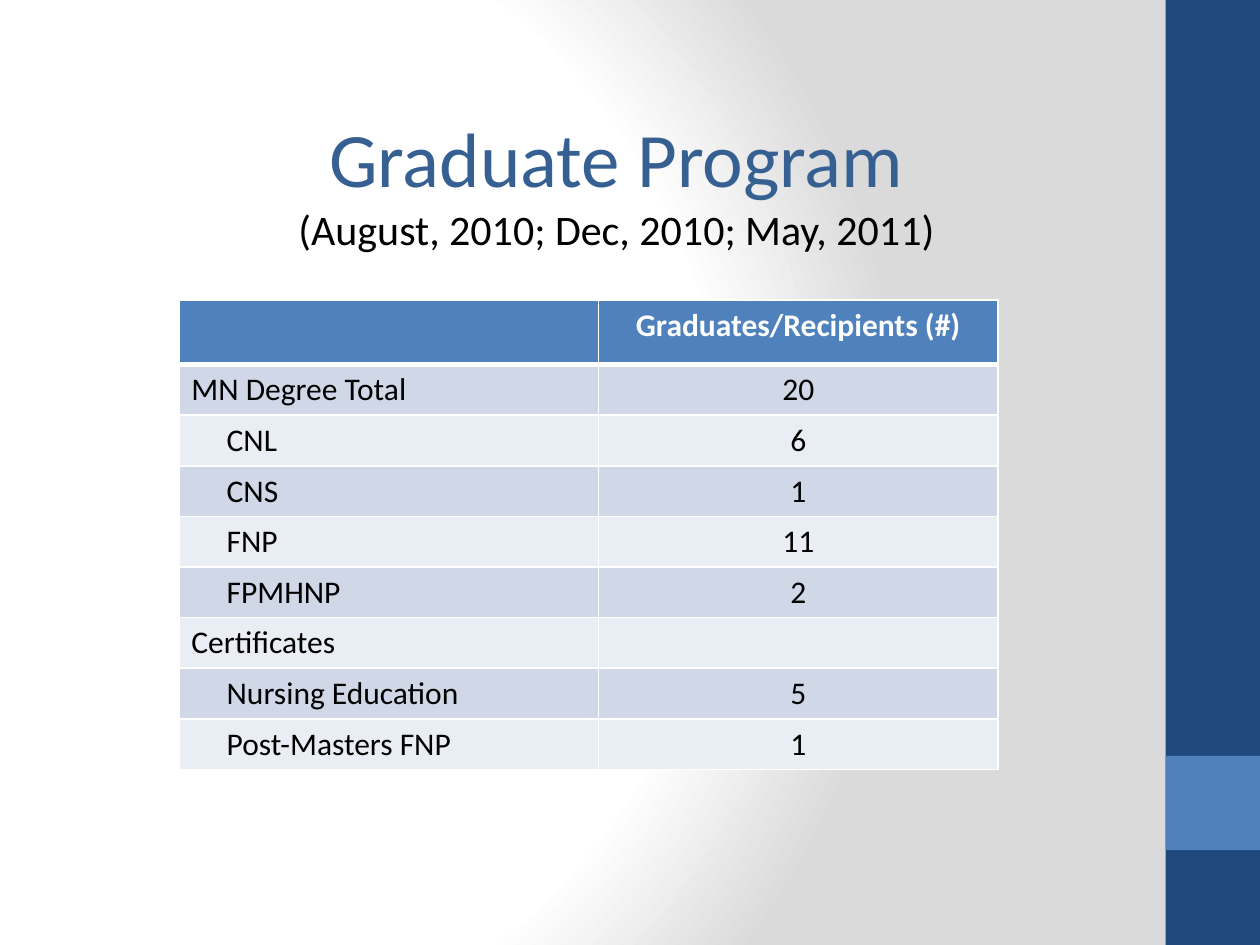
from lxml import etree
from pptx import Presentation
from pptx import util as u
from pptx.dml.color import RGBColor
from pptx.enum import shapes, text
from pptx.oxml import ns, parse_xml

FONT = "Calibri"
NAVY, BLUE, TITLE_BLUE = "1F497D", "4F81BD", "376092"
WHITE, BLACK = "FFFFFF", "000000"
BANDS = ["D0D8E8", "E9EDF4"]
COLUMN_WIDTHS = [8.46, 8.05]
HEADER_HEIGHT, ROW_HEIGHT = 1.3, 1.02
MARGIN, INDENT = 0.25, 0.71
ROWS = [
    ("MN Degree Total", "20", 0),
    ("CNL", "6", 1),
    ("CNS", "1", 1),
    ("FNP", "11", 1),
    ("FPMHNP", "2", 1),
    ("Certificates", "", 0),
    ("Nursing Education", "5", 1),
    ("Post-Masters FNP", "1", 1),
]


def color(value):
    return RGBColor.from_string(value)


def write(paragraph, content, size=18, fill=BLACK, bold=False, centered=False):
    paragraph.alignment = text.PP_ALIGN.CENTER if centered else text.PP_ALIGN.LEFT
    if not content:
        paragraph.font.size = u.Pt(size)
        return
    run = paragraph.add_run()
    run.text = content
    run.font.name = FONT
    run.font.size = u.Pt(size)
    run.font.bold = bold
    run.font.color.rgb = color(fill)


def set_background(slide):
    slide.background.fill.gradient()
    gradient = slide.element.find(f".//{ns.qn('a:gradFill')}")
    stops = "".join(
        f'<a:gs pos="{position * 1000}"><a:srgbClr val="{value}"/></a:gs>'
        for position, value in [(0, WHITE), (75, WHITE), (100, "DADADA")]
    )
    radial = parse_xml(
        f'<a:gradFill {ns.nsdecls("a")} rotWithShape="1"><a:gsLst>{stops}</a:gsLst>'
        '<a:path path="circle"><a:fillToRect l="20000" t="50000" r="100000" b="50000"/>'
        "</a:path></a:gradFill>"
    )
    gradient.getparent().replace(gradient, radial)


def add_rectangle(slide, left, top, width, height, fill):
    box = [u.Cm(length) for length in (left, top, width, height)]
    shape = slide.shapes.add_shape(shapes.MSO_SHAPE.RECTANGLE, *box)
    shape.shadow.inherit = False
    shape.fill.solid()
    shape.fill.fore_color.rgb = color(fill)
    shape.line.fill.background()


def add_title(slide):
    box = slide.shapes.add_textbox(u.Cm(5.51), u.Cm(2.11), u.Cm(13.84), u.Cm(3.18))
    frame = box.text_frame
    frame.word_wrap = True
    frame.auto_size = text.MSO_AUTO_SIZE.SHAPE_TO_FIT_TEXT
    write(frame.paragraphs[0], "Graduate Program", size=44, fill=TITLE_BLUE, centered=True)
    write(frame.add_paragraph(), "(August, 2010; Dec, 2010; May, 2011)", size=24, centered=True)


def set_borders(cell, top=1, bottom=1):
    properties = cell._tc.get_or_add_tcPr()
    widths = {"lnL": 1, "lnR": 1, "lnT": top, "lnB": bottom}
    for index, (side, width) in enumerate(widths.items()):
        line = etree.Element(ns.qn(f"a:{side}"), w=str(u.Pt(width)))
        solid = etree.SubElement(line, ns.qn("a:solidFill"))
        etree.SubElement(solid, ns.qn("a:srgbClr"), val=WHITE)
        properties.insert(index, line)


def fill_cell(cell, content, background, indent=0, top=1, bottom=1, **style):
    cell.fill.solid()
    cell.fill.fore_color.rgb = color(background)
    cell.margin_left = u.Cm(MARGIN + indent * INDENT)
    set_borders(cell, top, bottom)
    write(cell.text_frame.paragraphs[0], content, **style)


def add_graduates_table(slide):
    height = HEADER_HEIGHT + len(ROWS) * ROW_HEIGHT
    table = slide.shapes.add_table(
        len(ROWS) + 1, 2, u.Cm(3.61), u.Cm(6.05), u.Cm(sum(COLUMN_WIDTHS)), u.Cm(height)
    ).table
    for column, width in zip(table.columns, COLUMN_WIDTHS):
        column.width = u.Cm(width)
    table.rows[0].height = u.Cm(HEADER_HEIGHT)
    for column, heading in enumerate(["", "Graduates/Recipients (#)"]):
        fill_cell(table.cell(0, column), heading, BLUE, bottom=3,
                  fill=WHITE, bold=True, centered=True)
    for index, (label, count, indent) in enumerate(ROWS, start=1):
        table.rows[index].height = u.Cm(ROW_HEIGHT)
        band = BANDS[(index - 1) % 2]
        top = 3 if index == 1 else 1
        fill_cell(table.cell(index, 0), label, band, indent=indent, top=top)
        fill_cell(table.cell(index, 1), count, band, top=top, centered=True)


def main():
    presentation = Presentation()
    presentation.slide_width = u.Cm(25.4)
    presentation.slide_height = u.Cm(19.05)
    slide = presentation.slides.add_slide(presentation.slide_layouts[6])
    set_background(slide)
    add_rectangle(slide, 23.5, 0, 1.9, 19.05, NAVY)
    add_rectangle(slide, 23.5, 15.24, 1.9, 1.9, BLUE)
    add_title(slide)
    add_graduates_table(slide)
    presentation.save("out.pptx")


if __name__ == "__main__":
    main()
